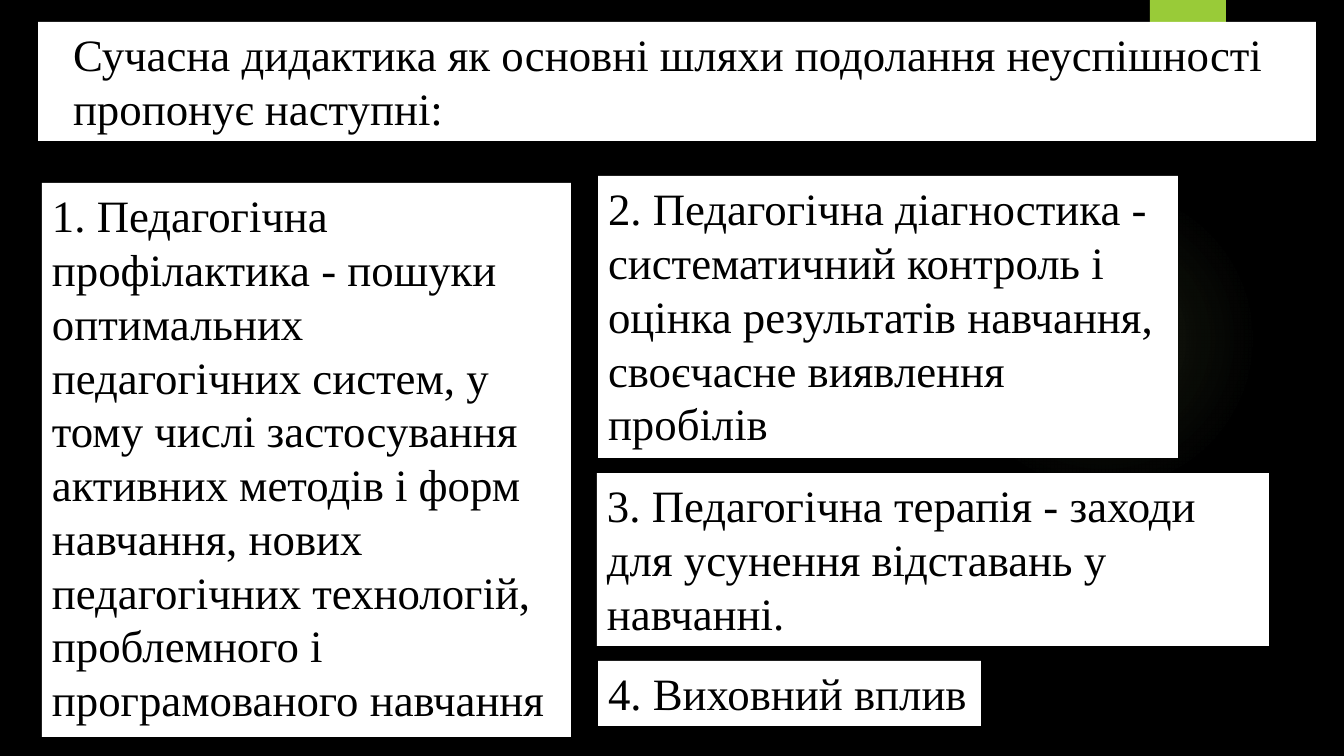
from lxml import etree
from pptx import Presentation
from pptx.dml.color import RGBColor
from pptx.enum.shapes import MSO_SHAPE
from pptx.enum.text import MSO_ANCHOR, PP_ALIGN
from pptx.oxml.ns import qn
from pptx.util import Emu, Pt

# Content: text and box (left, top, width, height) in px
TITLE = "Сучасна дидактика як основні шляхи подолання неуспішності пропонує наступні:"
TITLE_BOX = (38, 22, 1278, 119)
TITLE_INDENT = 25
WAYS = [
    ("1. Педагогічна профілактика - пошуки оптимальних педагогічних систем, у тому числі "
     "застосування активних методів і форм навчання, нових педагогічних технологій, "
     "проблемного і програмованого навчання", (42, 183, 529, 554)),
    ("2. Педагогічна діагностика - систематичний контроль і оцінка результатів навчання, "
     "своєчасне виявлення пробілів", (598, 176, 580, 282)),
    ("3. Педагогічна терапія - заходи для усунення відставань у навчанні.",
     (597, 473, 672, 173)),
    ("4. Виховний вплив", (598, 661, 383, 65)),
]
GLOW_BOX = (949, 184, 310, 310)
GLOW_STOPS = [(0, 7), (36, 6), (69, 0)]  # position and opacity, percent
TAB_BOX = (1150, 0, 76, 126)
COLORS = {"background": "000000", "panel": "FFFFFF", "text": "000000",
          "tab": "99CB38", "glow": "C2E088"}
FONT = "Times New Roman"
EMU_PER_PX = 914400 / 100.8


def px(length):
    return Emu(round(length * EMU_PER_PX))


def color(name):
    return RGBColor.from_string(COLORS[name])


def place(shape, box):
    shape.left, shape.top, shape.width, shape.height = map(px, box)


def add_plain_shape(kind, box):
    shape = slide.shapes.add_shape(kind, *map(px, box))
    shape.shadow.inherit = False
    shape.line.fill.background()
    return shape


def write_panel(shape, text, indent=0):
    shape.fill.solid()
    shape.fill.fore_color.rgb = color("panel")
    frame = shape.text_frame
    frame.word_wrap = True
    frame.vertical_anchor = MSO_ANCHOR.TOP
    frame.margin_left = px(10 + indent)
    frame.margin_right = px(10)
    frame.margin_top = frame.margin_bottom = px(5)
    paragraph = frame.paragraphs[0]
    paragraph.alignment = PP_ALIGN.LEFT
    paragraph.line_spacing = 1.0
    paragraph.space_before = Pt(0)
    run = paragraph.add_run()
    run.text = text
    run.font.name = FONT
    run.font.size = Pt(32)
    run.font.color.rgb = color("text")


presentation = Presentation()
presentation.slide_width, presentation.slide_height = px(1344), px(756)
slide = presentation.slides.add_slide(presentation.slide_layouts[5])
slide.background.fill.solid()
slide.background.fill.fore_color.rgb = color("background")

# Faint round glow: a radial gradient with transparent edges
glow = add_plain_shape(MSO_SHAPE.OVAL, GLOW_BOX)
glow.fill.gradient()
gradient = glow.element.spPr.find(qn("a:gradFill"))
for child in list(gradient):
    gradient.remove(child)
stops = etree.SubElement(gradient, qn("a:gsLst"))
for position, opacity in GLOW_STOPS:
    stop = etree.SubElement(stops, qn("a:gs"), pos=str(position * 1000))
    tint = etree.SubElement(stop, qn("a:srgbClr"), val=COLORS["glow"])
    etree.SubElement(tint, qn("a:alpha"), val=str(opacity * 1000))
circle = etree.SubElement(gradient, qn("a:path"), {"path": "circle"})
etree.SubElement(circle, qn("a:fillToRect"), l="50000", t="50000", r="50000", b="50000")

# Green tab at the top edge
tab = add_plain_shape(MSO_SHAPE.RECTANGLE, TAB_BOX)
tab.fill.solid()
tab.fill.fore_color.rgb = color("tab")

# Title panel, raised above the tab
title = slide.shapes.title
title.element.getparent().append(title.element)
place(title, TITLE_BOX)
write_panel(title, TITLE, TITLE_INDENT)

# Numbered panels
for text, box in WAYS:
    panel = slide.shapes.add_textbox(*map(px, box))
    write_panel(panel, text)

presentation.save("out.pptx")
